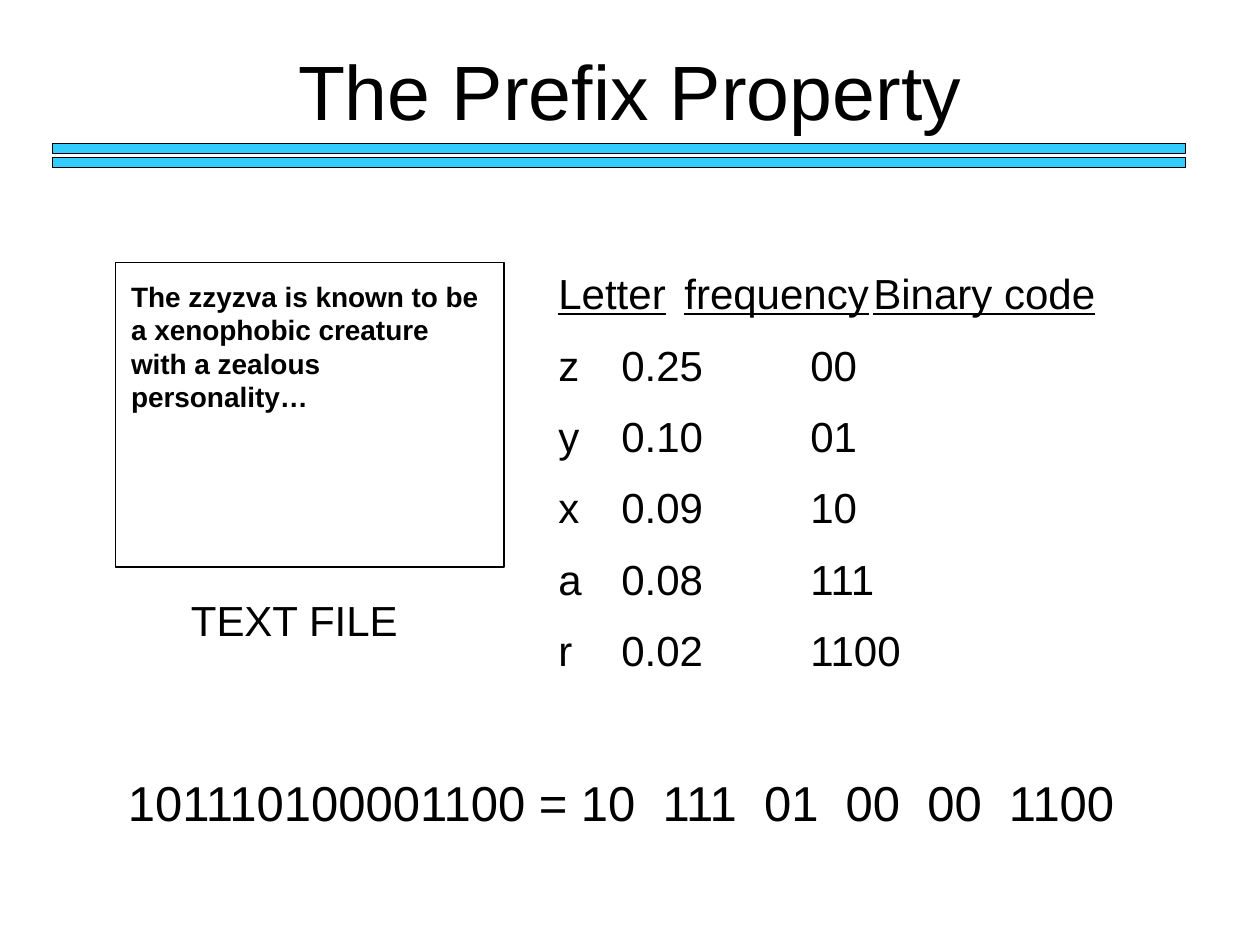
import pptx
import pptx.dml.color
import pptx.enum.shapes
import pptx.enum.text
import pptx.oxml.ns
import pptx.util
from dataclasses import dataclass
from lxml import etree


@dataclass(frozen=True)
class Theme:
    font: str = "Arial"
    ink: str = "000000"
    accent: str = "33CCFF"
    title: int = 44
    code: int = 28
    body: int = 24
    sample: int = 16
    line: float = 0.75


class SlideBuilder:
    """Places elements on a grid of 120 columns by 90 rows."""

    columns, rows = 120, 90

    def __init__(self, presentation, theme):
        self.theme = theme
        self.cell_width = presentation.slide_width / self.columns
        self.cell_height = presentation.slide_height / self.rows
        self.slide = presentation.slides.add_slide(presentation.slide_layouts[5])

    def box(self, column, row, width, height):
        return (round(column * self.cell_width), round(row * self.cell_height),
                round(width * self.cell_width), round(height * self.cell_height))

    def color(self, value):
        return pptx.dml.color.RGBColor.from_string(value)

    def add_styled_run(self, paragraph, text, size, **extra):
        run = paragraph.add_run()
        run.text = text
        style = {"name": self.theme.font, "size": pptx.util.Pt(size), **extra}
        for name, value in style.items():
            setattr(run.font, name, value)
        run.font.color.rgb = self.color(self.theme.ink)

    def space_before(self, paragraph, percent):
        properties = paragraph._p.get_or_add_pPr()
        spacing = etree.SubElement(properties, pptx.oxml.ns.qn("a:spcBef"))
        etree.SubElement(spacing, pptx.oxml.ns.qn("a:spcPct"), val=str(percent * 1000))

    def title(self, text, *cells):
        shape = self.slide.shapes.title
        for name, value in zip(("left", "top", "width", "height"), self.box(*cells)):
            setattr(shape, name, value)
        frame_style = {
            "margin_left": pptx.util.Inches(0.06),
            "margin_top": pptx.util.Inches(0.06),
            "margin_bottom": pptx.util.Inches(0.06),
            "vertical_anchor": pptx.enum.text.MSO_ANCHOR.MIDDLE,
        }
        for name, value in frame_style.items():
            setattr(shape.text_frame, name, value)
        paragraph = shape.text_frame.paragraphs[0]
        paragraph.alignment = pptx.enum.text.PP_ALIGN.CENTER
        paragraph._p.get_or_add_pPr().set("marL", str(pptx.util.Inches(0.04)))
        self.add_styled_run(paragraph, text, self.theme.title)

    def text(self, lines, size, *cells, wrap=True, spacing=0, **first_line):
        frame = self.slide.shapes.add_textbox(*self.box(*cells)).text_frame
        frame.word_wrap = wrap
        frame.auto_size = pptx.enum.text.MSO_AUTO_SIZE.SHAPE_TO_FIT_TEXT
        for index, line in enumerate(lines):
            paragraph = frame.add_paragraph() if index else frame.paragraphs[0]
            if spacing:
                self.space_before(paragraph, spacing)
            self.add_styled_run(paragraph, line, size, **({} if index else first_line))

    def rectangle(self, *cells, fill=None, parent=None):
        shapes = (parent or self.slide).shapes
        shape = shapes.add_shape(pptx.enum.shapes.MSO_SHAPE.RECTANGLE, *self.box(*cells))
        shape.shadow.inherit = False
        if fill:
            shape.fill.solid()
            shape.fill.fore_color.rgb = self.color(fill)
        else:
            shape.fill.background()
        shape.line.color.rgb = self.color(self.theme.ink)
        shape.line.width = pptx.util.Pt(self.theme.line)

    def double_rule(self, column, row, width, height, step):
        group = self.slide.shapes.add_group_shape()
        for index in range(2):
            self.rectangle(column, row + index * step, width, height,
                           fill=self.theme.accent, parent=group)


def main():
    presentation = pptx.Presentation()
    presentation.slide_width = pptx.util.Inches(10)
    presentation.slide_height = pptx.util.Inches(7.5)
    theme = Theme()
    builder = SlideBuilder(presentation, theme)

    # Heading
    builder.title("The Prefix Property", 9, 1, 102, 15)
    builder.double_rule(5, 13.65, 107.9, 0.95, step=1.35)

    # Letter codes, aligned on the default tab stops
    codes = [("z", "0.25", "00"), ("y", "0.10", "01"), ("x", "0.09", "10"),
             ("a", "0.08", "111"), ("r", "0.02", "1100")]
    lines = ["Letter\tfrequency\tBinary code"]
    lines += [f"{letter}\t{frequency}\t\t{code}" for letter, frequency, code in codes]
    builder.text(lines, theme.body, 52, 24.9, 64, 51.6, spacing=50, underline=True)

    # Text file
    builder.text(["TEXT FILE"], theme.body, 17, 56, 22.2, 6, wrap=False)
    builder.text(["The zzyzva is known to be a xenophobic creature "
                  "with a zealous personality…"],
                 theme.sample, 11.3, 26, 35.8, 14, spacing=50, bold=True)
    builder.rectangle(11, 25, 37, 29)

    # Decoded bit string
    builder.text(["101110100001100 = 10  111  01  00  00  1100"],
                 theme.code, 11, 73, 98.5, 6.9, wrap=False)

    presentation.save("out.pptx")


if __name__ == "__main__":
    main()
